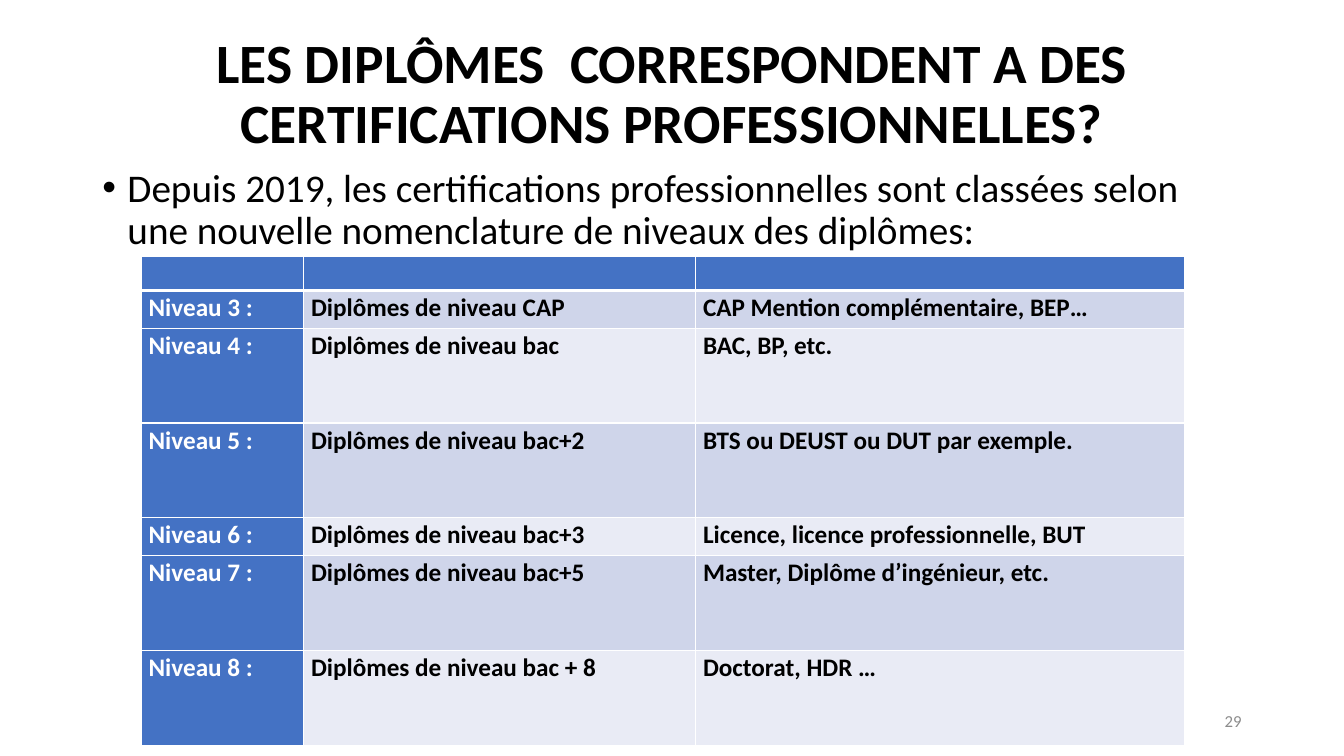
import pptx
import pptx.util
import pptx.dml.color
import pptx.enum.text
import pptx.oxml
import pptx.oxml.ns
from lxml import etree

Pt = pptx.util.Pt
ALIGN = pptx.enum.text.PP_ALIGN
ANCHOR = pptx.enum.text.MSO_ANCHOR
qn = pptx.oxml.ns.qn

COLORS = {"black": "000000", "white": "FFFFFF", "grey": "8C8C8C",
          "blue": "4472C4", "band_dark": "CFD5EA", "band_light": "E9EBF5"}

LEVELS = [
    ("Niveau 3 :", "Diplômes de niveau CAP", "CAP Mention complémentaire, BEP…"),
    ("Niveau 4 :", "Diplômes de niveau bac", "BAC, BP, etc."),
    ("Niveau 5 :", "Diplômes de niveau bac+2", "BTS ou DEUST ou DUT par exemple."),
    ("Niveau 6 :", "Diplômes de niveau bac+3", "Licence, licence professionnelle, BUT"),
    ("Niveau 7 :", "Diplômes de niveau bac+5", "Master, Diplôme d’ingénieur, etc."),
    ("Niveau 8 :", "Diplômes de niveau bac + 8", "Doctorat, HDR …"),
]
HEADER, SHORT, TALL = 24.5, 27, 67.7
ROW_HEIGHTS = [HEADER, SHORT, TALL, TALL, SHORT, TALL, TALL]
COL_WIDTHS = [116, 280, 349]


def rgb(name):
    return pptx.dml.color.RGBColor.from_string(COLORS[name])


def write(tf, text, size=18, color="black", bold=False, align=ALIGN.LEFT,
          line=1.0, before=0, after=0, font="Calibri"):
    """Put formatted text in the first paragraph of a text frame."""
    p = tf.paragraphs[0]
    p.alignment, p.line_spacing = align, line
    p.space_before, p.space_after = Pt(before), Pt(after)
    r = p.add_run()
    r.text = text
    r.font.name, r.font.size, r.font.bold = font, Pt(size), bold
    r.font.color.rgb = rgb(color)
    return p


class Deck:
    def __init__(self, width, height):
        self.prs = pptx.Presentation()
        self.prs.slide_width, self.prs.slide_height = Pt(width), Pt(height)
        self.s = self.prs.slides.add_slide(self.prs.slide_layouts[6])

    def text(self, x, y, w, h, text, anchor=ANCHOR.TOP, **style):
        tf = self.s.shapes.add_textbox(Pt(x), Pt(y), Pt(w), Pt(h)).text_frame
        tf.word_wrap, tf.vertical_anchor = True, anchor
        return write(tf, text, **style)

    def bullet(self, x, y, w, h, text, indent=18, **style):
        p = self.text(x, y, w, h, text, **style)
        pPr = p._p.get_or_add_pPr()
        pPr.set("marL", str(Pt(indent)))
        pPr.set("indent", str(-Pt(indent)))
        etree.SubElement(pPr, qn("a:buFont")).set("typeface", "Arial")
        etree.SubElement(pPr, qn("a:buChar")).set("char", "•")

    def borders(self, cell, **widths):
        tcPr = cell._tc.get_or_add_tcPr()
        for i, side in enumerate("LRTB"):
            ln = etree.Element(qn("a:ln" + side), w=str(Pt(widths.get(side, 1))))
            fill = etree.SubElement(ln, qn("a:solidFill"))
            etree.SubElement(fill, qn("a:srgbClr")).set("val", COLORS["white"])
            tcPr.insert(i, ln)

    def table(self, x, y, col_widths, row_heights, rows):
        tbl = self.s.shapes.add_table(
            len(row_heights), len(col_widths), Pt(x), Pt(y),
            Pt(sum(col_widths)), Pt(sum(row_heights))).table
        tbl.first_col = True
        for col, width in zip(tbl.columns, col_widths):
            col.width = Pt(width)
        for row, height in zip(tbl.rows, row_heights):
            row.height = Pt(height)
        for i, row in enumerate(tbl.rows):
            for j, cell in enumerate(row.cells):
                head = i == 0 or j == 0
                band = "band_dark" if i % 2 else "band_light"
                cell.margin_left = cell.margin_right = Pt(5.2)
                cell.margin_top = cell.margin_bottom = 0
                cell.fill.solid()
                cell.fill.fore_color.rgb = rgb("blue" if head else band)
                # The header's heavy rule is shared with the row below it
                self.borders(cell, B=3 if i == 0 else 1, T=3 if i == 1 else 1)
                if i:
                    write(cell.text_frame, rows[i - 1][j], bold=True, line=1.07,
                          after=8, color="white" if head else "black")


def main():
    deck = Deck(960, 540)

    # Title
    deck.text(66, 28.75, 828, 79.5,
              "LES DIPLÔMES  CORRESPONDENT A DES CERTIFICATIONS PROFESSIONNELLES?",
              anchor=ANCHOR.MIDDLE, size=39.6, bold=True, align=ALIGN.CENTER, line=0.9)

    # Introduction
    deck.bullet(66, 116.6, 828, 370,
                "Depuis 2019, les certifications professionnelles sont classées "
                "selon une nouvelle nomenclature de niveaux des diplômes:",
                size=28, line=0.9, before=10)

    # Slide number
    deck.text(678, 500.5, 216, 28.75, "29", anchor=ANCHOR.MIDDLE,
              size=12, color="grey", align=ALIGN.RIGHT)

    # Levels of qualification
    deck.table(101, 183, COL_WIDTHS, ROW_HEIGHTS, LEVELS)

    deck.prs.save("out.pptx")


if __name__ == "__main__":
    main()
